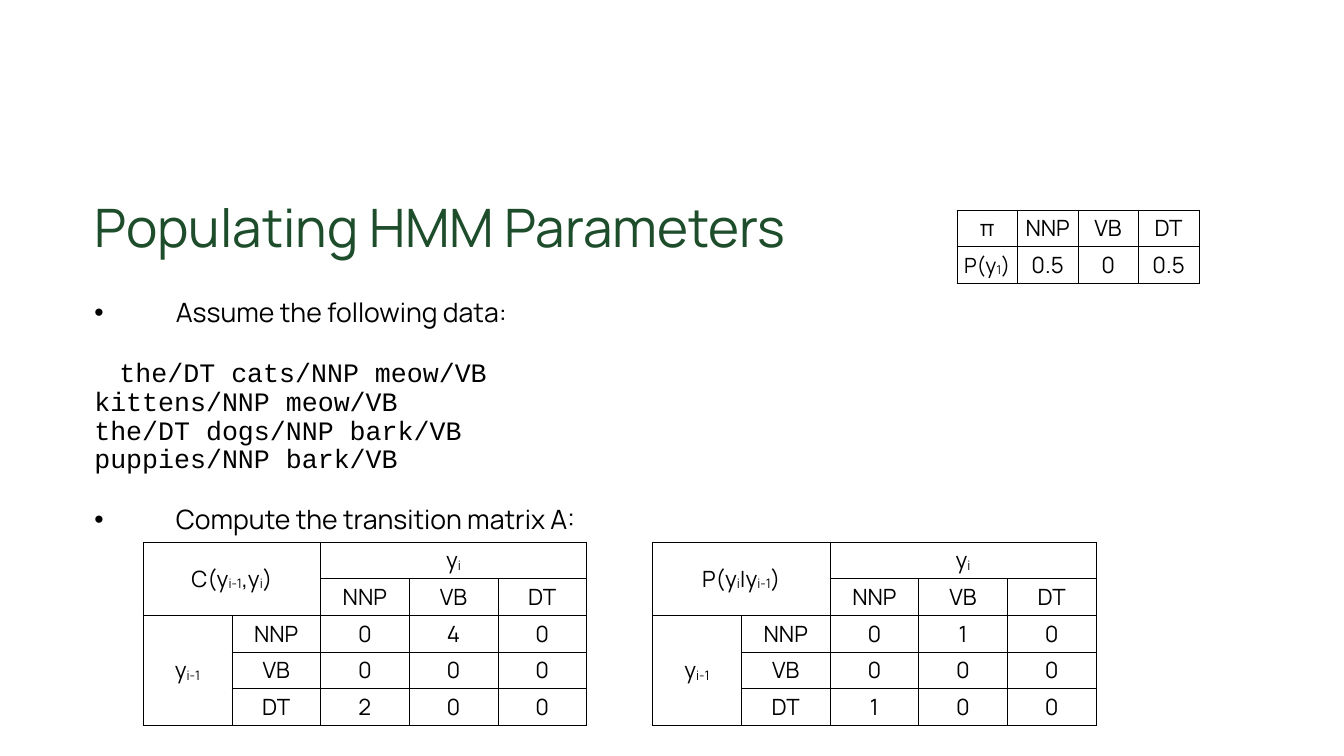
from lxml.etree import SubElement
from pptx import Presentation
from pptx.dml.color import RGBColor
from pptx.enum.text import MSO_ANCHOR, MSO_AUTO_SIZE, PP_ALIGN
from pptx.oxml.ns import qn
from pptx.util import Pt


def color(code):
    return RGBColor.from_string(code)


def write(para, text, size=32, font="Manrope", ink="000000"):
    for row, line in enumerate(text.split("\n")):
        if row:
            para.add_line_break()
        for part, piece in enumerate(line.split("~")):
            if not piece:
                continue
            run = para.add_run()
            run.text = piece
            run.font.size = Pt(size)
            run.font.name = font
            run.font.color.rgb = color(ink)
            if part % 2:
                run.font._element.set("baseline", "-6000")


class Deck:
    green = "1E4D2B"
    black = "000000"
    left, width = 127.5, 1722
    high = 47.2

    def __init__(self, show):
        self.slide = show.slides.add_slide(show.slide_layouts[1])

    def place(self, shape, top, height, anchor):
        shape.left, shape.top = Pt(self.left), Pt(top)
        shape.width, shape.height = Pt(self.width), Pt(height)
        frame = shape.text_frame
        frame.margin_left = frame.margin_right = Pt(7.2)
        frame.margin_top = frame.margin_bottom = Pt(7.2)
        frame.vertical_anchor = anchor
        frame.auto_size = MSO_AUTO_SIZE.NONE
        frame.word_wrap = True
        return frame

    def title(self, text):
        frame = self.place(self.slide.shapes.title, 268.5, 121, MSO_ANCHOR.MIDDLE)
        para = frame.paragraphs[0]
        para.alignment = PP_ALIGN.LEFT
        para.line_spacing = 0.9
        write(para, text, size=75.7, ink=self.green)

    def body(self, items):
        frame = self.place(self.slide.placeholders[1], 420.5, 560, MSO_ANCHOR.TOP)
        for spot, (text, code) in enumerate(items):
            para = frame.add_paragraph() if spot else frame.paragraphs[0]
            para.level = int(code)
            para.line_spacing = 0.9
            para.space_before = Pt(45 if spot else 0)
            props = para._p.get_or_add_pPr()
            props.set("marL", str(Pt(0 if code else 116.6)))
            props.set("indent", str(Pt(36 if code else -116.6)))
            if code:
                SubElement(props, qn("a:buNone"))
            else:
                SubElement(props, qn("a:buFont"), typeface="Arial")
                SubElement(props, qn("a:buChar"), char="•")
            write(para, text, size=38, font="Courier New" if code else "Manrope")

    def border(self, cell):
        props = cell._tc.get_or_add_tcPr()
        for side in ("a:lnL", "a:lnR", "a:lnT", "a:lnB"):
            line = SubElement(props, qn(side), w=str(Pt(1)))
            fill = SubElement(line, qn("a:solidFill"))
            SubElement(fill, qn("a:srgbClr"), val=self.black)

    def table(self, left, top, wide, rows, spans=(), sizes={}):
        count = len(rows[0])
        frame = self.slide.shapes.add_table(
            len(rows), count, Pt(left), Pt(top), Pt(wide * count), Pt(self.high * len(rows)))
        table = frame.table
        table.first_row = table.horz_banding = False
        for col in table.columns:
            col.width = Pt(wide)
        for row in table.rows:
            row.height = Pt(self.high)
        for start, end in spans:
            table.cell(*start).merge(table.cell(*end))
        for r, row in enumerate(rows):
            for c, text in enumerate(row):
                cell = table.cell(r, c)
                cell.margin_left = cell.margin_right = Pt(4.3)
                cell.margin_top = cell.margin_bottom = Pt(4.3)
                cell.vertical_anchor = MSO_ANCHOR.MIDDLE
                self.border(cell)
                cell.fill.background()
                para = cell.text_frame.paragraphs[0]
                para.alignment = PP_ALIGN.CENTER
                write(para, text, size=sizes.get((r, c), 32))

    def matrix(self, left, name, counts):
        rows = [[name, "", "y~i~", "", ""], ["", "", *TAGS]]
        for spot, (tag, vals) in enumerate(zip(TAGS, counts)):
            rows.append(["" if spot else "y~i-1~", tag, *map(str, vals)])
        spans = [((0, 0), (1, 1)), ((0, 2), (0, 4)), ((2, 0), (4, 0))]
        self.table(left, 774, 126.7, rows, spans)


TAGS = ["NNP", "VB", "DT"]
DATA = """the/DT cats/NNP meow/VB
kittens/NNP meow/VB
the/DT dogs/NNP bark/VB
puppies/NNP bark/VB"""


def main():
    show = Presentation()
    show.slide_width, show.slide_height = Pt(1920), Pt(1080)
    deck = Deck(show)
    deck.title("Populating HMM Parameters")
    deck.body([
        ("Assume the following data:", False),
        (DATA, True),
        ("Compute the transition matrix A:", False),
    ])
    start = [["π", *TAGS], ["P(y~1~)", "0.5", "0", "0.5"]]
    deck.table(1367, 300, 86.4, start, sizes={(1, 0): 30})
    deck.matrix(204.5, "C(y~i-1~,y~i~)", [(0, 4, 0), (0, 0, 0), (2, 0, 0)])
    deck.matrix(932.4, "P(y~i~|y~i-1~)", [(0, 1, 0), (0, 0, 0), (1, 0, 0)])
    show.save("out.pptx")


if __name__ == "__main__":
    main()
